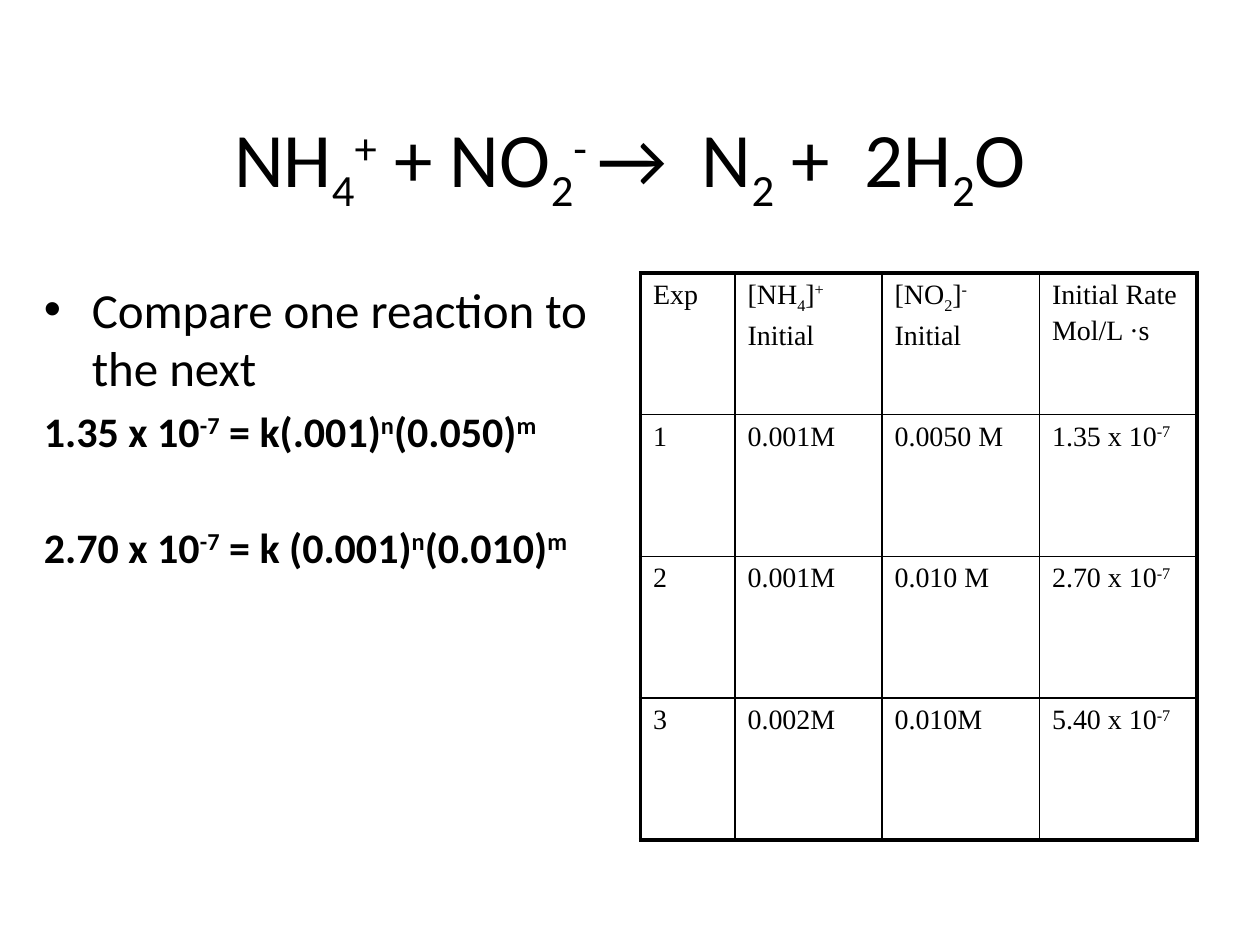
import dataclasses

import lxml.etree
import pptx
import pptx.dml.color
import pptx.enum.text
import pptx.oxml.ns
import pptx.util


@dataclasses.dataclass(frozen=True)
class Theme:
    ink: str = "000000"
    body_font: str = "Calibri"
    table_font: str = "Times New Roman"
    title_size: float = 44
    lead_size: float = 28
    equation_size: float = 24
    table_size: float = 16
    outer_line: float = 2.25
    inner_line: float = 1
    space_before: str = "20000"
    equation_gap: float = 37.6


THEME = Theme()
UNIT = pptx.util.Inches(1) / 12
TITLE_BOX = (9, 8, 102, 15)
BODY_BOX = (3, 26, 56, 54)
TABLE_BOX = (61, 26, 53, 54)
TABLE_COLUMNS = (9, 14, 15, 15)
BASELINES = {"_": "-25000", "^": "30000"}

TITLE = "NH|_4|^+| + NO|_2|^- |→  N|_2| +  2H|_2|O"
LEAD = "Compare one reaction to the next"
EQUATIONS = (
    "1.35 x 10|^-7| = k(.001)|^n|(0.050)|^m",
    "2.70 x 10|^-7| = k (0.001)|^n|(0.010)|^m",
)
RATES = (
    ("Exp", "[NH|_4|]|^+\nInitial", "[NO|_2|]|^-\nInitial", "Initial Rate\nMol/L ·s"),
    ("1", "0.001M", "0.0050 M", "1.35 x 10|^-7"),
    ("2", "0.001M", "0.010 M", "2.70 x 10|^-7"),
    ("3", "0.002M", "0.010M", "5.40 x 10|^-7"),
)


def grid(units):
    return pptx.util.Emu(round(units * UNIT))


def add_element(parent, tag, **attributes):
    return lxml.etree.SubElement(parent, pptx.oxml.ns.qn(tag), attributes)


def add_runs(paragraph, formula, font, size, bold=False):
    for part in formula.split("|"):
        run = paragraph.add_run()
        run.text = part.lstrip("_^")
        run.font.name = font
        run.font.size = pptx.util.Pt(size)
        run.font.bold = bold
        run.font.color.rgb = pptx.dml.color.RGBColor.from_string(THEME.ink)
        if part[0] in BASELINES:
            run.font._element.set("baseline", BASELINES[part[0]])


def add_space_before(paragraph):
    spacing = add_element(paragraph._p.get_or_add_pPr(), "a:spcBef")
    add_element(spacing, "a:spcPct", val=THEME.space_before)


def hang(paragraph):
    properties = paragraph._p.get_or_add_pPr()
    indent = pptx.util.Inches(0.38)
    properties.set("marL", str(indent))
    properties.set("indent", str(-indent))
    return properties


def add_text_frame(slide, box):
    text_frame = slide.shapes.add_textbox(*map(grid, box)).text_frame
    text_frame.word_wrap = True
    return text_frame


def add_title(slide, box):
    text_frame = add_text_frame(slide, box)
    text_frame.vertical_anchor = pptx.enum.text.MSO_ANCHOR.MIDDLE
    paragraph = text_frame.paragraphs[0]
    paragraph.alignment = pptx.enum.text.PP_ALIGN.CENTER
    add_runs(paragraph, TITLE, THEME.body_font, THEME.title_size)


def add_comparison(slide, box):
    text_frame = add_text_frame(slide, box)
    lead = text_frame.paragraphs[0]
    properties = hang(lead)
    add_space_before(lead)
    add_element(properties, "a:buFont", typeface="Arial")
    add_element(properties, "a:buChar", char="•")
    add_runs(lead, LEAD, THEME.body_font, THEME.lead_size)
    for index, equation in enumerate(EQUATIONS):
        paragraph = text_frame.add_paragraph()
        hang(paragraph)
        if index:
            paragraph.space_before = pptx.util.Pt(THEME.equation_gap)
        else:
            add_space_before(paragraph)
        add_runs(paragraph, equation, THEME.body_font, THEME.equation_size, bold=True)


def add_borders(cell, outer_sides):
    properties = cell._tc.get_or_add_tcPr()
    for side, is_outer in outer_sides.items():
        width = pptx.util.Pt(THEME.outer_line if is_outer else THEME.inner_line)
        line = add_element(properties, "a:ln" + side, w=str(width))
        add_element(add_element(line, "a:solidFill"), "a:srgbClr", val=THEME.ink)


def add_rate_table(slide, box):
    row_count, column_count = len(RATES), len(TABLE_COLUMNS)
    table = slide.shapes.add_table(row_count, column_count, *map(grid, box)).table
    table.first_row = False
    table.horz_banding = False
    for column, width in zip(table.columns, TABLE_COLUMNS):
        column.width = grid(box[2] * width / sum(TABLE_COLUMNS))
    for row_index, formulas in enumerate(RATES):
        table.rows[row_index].height = grid(box[3] / row_count)
        for column_index, formula in enumerate(formulas):
            cell = table.cell(row_index, column_index)
            add_borders(cell, {
                "L": column_index == 0,
                "R": column_index == column_count - 1,
                "T": row_index == 0,
                "B": row_index == row_count - 1,
            })
            cell.fill.background()
            for line_index, line in enumerate(formula.split("\n")):
                text_frame = cell.text_frame
                paragraph = text_frame.add_paragraph() if line_index else text_frame.paragraphs[0]
                add_space_before(paragraph)
                add_runs(paragraph, line, THEME.table_font, THEME.table_size)


def main():
    presentation = pptx.Presentation()
    presentation.slide_width = grid(120)
    presentation.slide_height = grid(90)
    slide = presentation.slides.add_slide(presentation.slide_layouts[6])
    add_title(slide, TITLE_BOX)
    add_comparison(slide, BODY_BOX)
    add_rate_table(slide, TABLE_BOX)
    presentation.save("out.pptx")


if __name__ == "__main__":
    main()
